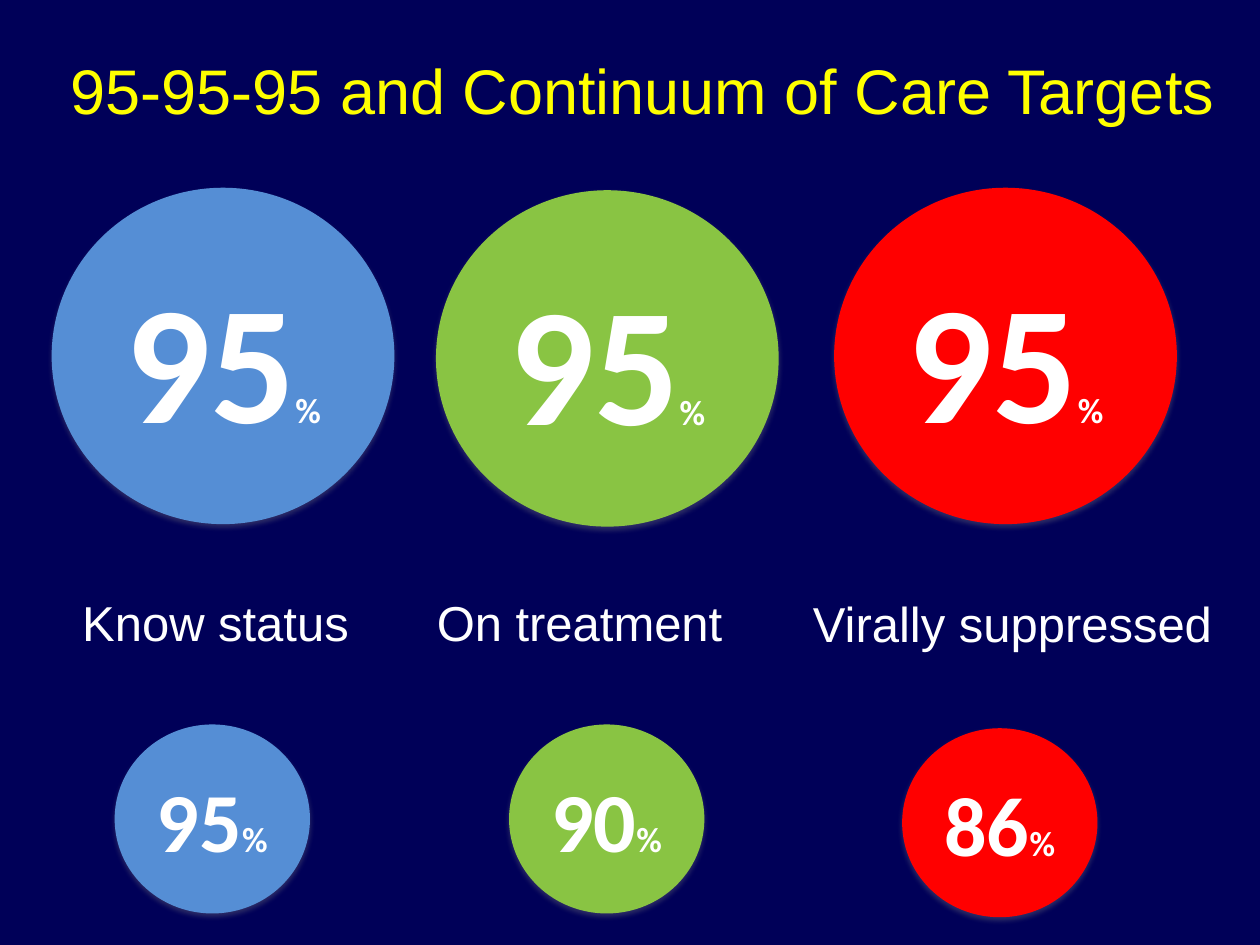
from lxml.etree import SubElement
from pptx import Presentation
from pptx.dml.color import RGBColor
from pptx.enum.shapes import MSO_SHAPE
from pptx.enum.text import MSO_ANCHOR, MSO_AUTO_SIZE, PP_ALIGN
from pptx.oxml.ns import qn
from pptx.util import Inches, Pt

NAVY = RGBColor(0x00, 0x00, 0x58)
BLUE = RGBColor(0x55, 0x8E, 0xD5)
GREEN = RGBColor(0x89, 0xC4, 0x43)
RED = RGBColor(0xFF, 0x00, 0x00)
WHITE = RGBColor(0xFF, 0xFF, 0xFF)
YELLOW = RGBColor(0xFF, 0xFF, 0x00)
SHADOW_GRAY = RGBColor(0x80, 0x80, 0x80)


class TargetSlide:
    """Holds the style and the current slide."""

    label_format = {"name": "Arial", "size": Pt(28)}
    title_format = {"name": "Arial", "size": Pt(36)}
    number_format = {"name": "Calibri", "bold": True}
    percent_size = Pt(20)

    def __init__(self, deck):
        self.slide = deck.slides.add_slide(deck.slide_layouts[6])
        fill = self.slide.background.fill
        fill.solid()
        fill.fore_color.rgb = NAVY

    def add_span(self, para, text, color, formats):
        span = para.add_run()
        span.text = text
        span.font.color.rgb = color
        for name, value in formats.items():
            setattr(span.font, name, value)

    def add_shadow(self, shape):
        effects = SubElement(shape._element.spPr, qn("a:effectLst"))
        shadow = SubElement(effects, qn("a:outerShdw"), blurRad=str(Pt(3.1)),
                            dist=str(Pt(1.8)), dir="5400000", rotWithShape="0")
        color = SubElement(shadow, qn("a:srgbClr"), val=str(SHADOW_GRAY))
        SubElement(color, qn("a:alpha"), val="35000")

    def add_circle(self, left, top, width, height, color, number, size):
        circle = self.slide.shapes.add_shape(
            MSO_SHAPE.OVAL, Inches(left), Inches(top), Inches(width), Inches(height))
        circle.fill.solid()
        circle.fill.fore_color.rgb = color
        circle.line.fill.background()
        self.add_shadow(circle)
        circle.text_frame.vertical_anchor = MSO_ANCHOR.MIDDLE
        para = circle.text_frame.paragraphs[0]
        para.alignment = PP_ALIGN.CENTER
        for text, text_size in ((number, Pt(size)), ("%", self.percent_size)):
            self.add_span(para, text, WHITE, {**self.number_format, "size": text_size})

    def add_text(self, left, top, width, height, text, color, formats, **frame_formats):
        box = self.slide.shapes.add_textbox(
            Inches(left), Inches(top), Inches(width), Inches(height))
        for name, value in {"word_wrap": True, **frame_formats}.items():
            setattr(box.text_frame, name, value)
        para = box.text_frame.paragraphs[0]
        para.alignment = PP_ALIGN.CENTER
        self.add_span(para, text, color, formats)

    def add_label(self, left, top, width, text, wrap=True):
        self.add_text(left, top, width, 0.57, text, WHITE, self.label_format,
                      word_wrap=wrap, auto_size=MSO_AUTO_SIZE.SHAPE_TO_FIT_TEXT)

    def add_title(self, text):
        self.add_text(0.41, 0.08, 9.38, 1.25, text, YELLOW, self.title_format,
                      vertical_anchor=MSO_ANCHOR.MIDDLE)


def main():
    deck = Presentation()
    deck.slide_width, deck.slide_height = Inches(10), Inches(7.5)
    page = TargetSlide(deck)

    # Large circles: the three targets
    for left, top, color in ((0.41, 1.49, BLUE), (3.46, 1.51, GREEN), (6.62, 1.49, RED)):
        page.add_circle(left, top, 2.72, 2.67, color, "95", 96)

    # Labels between the two rows
    page.add_label(0.5, 4.65, 2.42, "Know status")
    page.add_label(3.35, 4.65, 2.5, "On treatment", wrap=False)
    page.add_label(5.76, 4.66, 4.55, "Virally suppressed")

    # Small circles: the continuum of care
    for left, top, color, number in ((0.91, 5.75, BLUE, "95"), (4.04, 5.75, GREEN, "90"),
                                     (7.16, 5.78, RED, "86")):
        page.add_circle(left, top, 1.55, 1.5, color, number, 48)

    page.add_title("95-95-95 and Continuum of Care Targets")
    deck.save("out.pptx")


if __name__ == "__main__":
    main()
